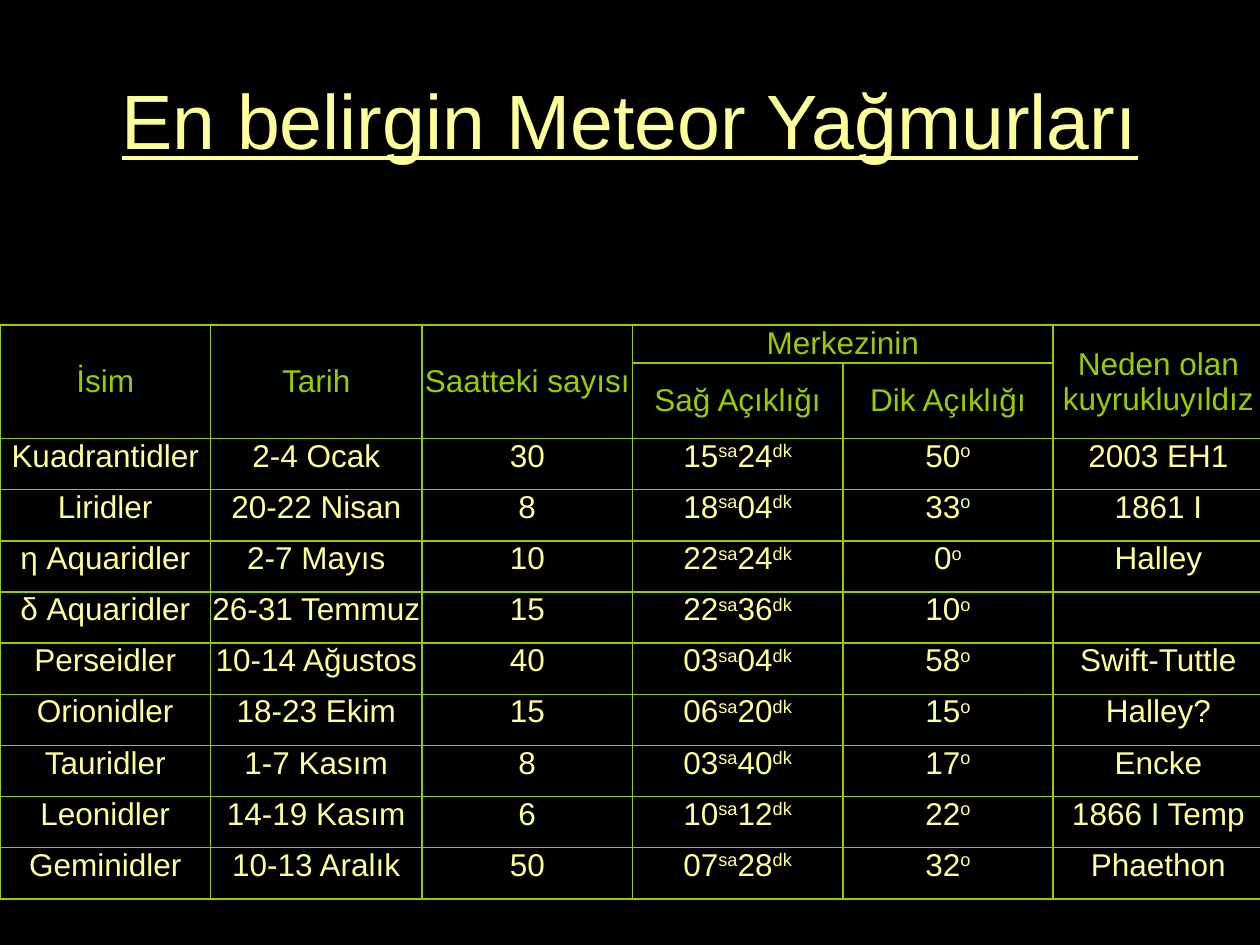
"""Build a slide with a table of the most prominent meteor showers."""

from dataclasses import dataclass
from typing import NamedTuple

from lxml import etree
from pptx import Presentation
from pptx.dml.color import RGBColor
from pptx.enum.text import MSO_ANCHOR, PP_ALIGN
from pptx.oxml.ns import qn
from pptx.util import Inches, Pt

CENTER = PP_ALIGN.CENTER
MIDDLE = MSO_ANCHOR.MIDDLE
TOP = MSO_ANCHOR.TOP


@dataclass(frozen=True)
class Theme:
    font: str = "Arial"
    back: str = "000000"
    text: str = "FFFF99"
    accent: str = "99CC00"
    title: int = 44
    body: int = 18
    line: int = 1


class Part(NamedTuple):
    text: str
    raised: bool = False


class Head(NamedTuple):
    text: str
    row: int
    col: int
    last_row: int
    last_col: int


class Shower(NamedTuple):
    name: str
    date: str
    rate: str
    hour: str
    minute: str
    angle: str
    comet: str

    def cells(self) -> list[list[Part]]:
        ascent = [Part(self.hour), Part("sa", True), Part(self.minute), Part("dk", True)]
        return [
            [Part(self.name)],
            [Part(self.date)],
            [Part(self.rate)],
            ascent,
            [Part(self.angle), Part("o", True)],
            [Part(self.comet)] if self.comet else [],
        ]


THEME = Theme()
WIDTHS = [1.67, 1.68, 1.67, 1.67, 1.67, 1.67]
TOTAL = 4.34
FIRST = 0.28
HEADS = [
    Head("İsim", 0, 0, 1, 0),
    Head("Tarih", 0, 1, 1, 1),
    Head("Saatteki sayısı", 0, 2, 1, 2),
    Head("Merkezinin", 0, 3, 0, 4),
    Head("Neden olan kuyrukluyıldız", 0, 5, 1, 5),
    Head("Sağ Açıklığı", 1, 3, 1, 3),
    Head("Dik Açıklığı", 1, 4, 1, 4),
]
SHOWERS = [
    Shower("Kuadrantidler", "2-4 Ocak", "30", "15", "24", "50", "2003 EH1"),
    Shower("Liridler", "20-22 Nisan", "8", "18", "04", "33", "1861 I"),
    Shower("η Aquaridler", "2-7 Mayıs", "10", "22", "24", "0", "Halley"),
    Shower("δ Aquaridler", "26-31 Temmuz", "15", "22", "36", "10", ""),
    Shower("Perseidler", "10-14 Ağustos", "40", "03", "04", "58", "Swift-Tuttle"),
    Shower("Orionidler", "18-23 Ekim", "15", "06", "20", "15", "Halley?"),
    Shower("Tauridler", "1-7 Kasım", "8", "03", "40", "17", "Encke"),
    Shower("Leonidler", "14-19 Kasım", "6", "10", "12", "22", "1866 I Temp"),
    Shower("Geminidler", "10-13 Aralık", "50", "07", "28", "32", "Phaethon"),
]


def write(frame, parts: list[Part], size: int, color: str, underline: bool = False) -> None:
    para = frame.paragraphs[0]
    para.alignment = CENTER
    for part in parts:
        run = para.add_run()
        run.text = part.text
        font = run.font
        font.name = THEME.font
        font.size = Pt(size)
        font.color.rgb = RGBColor.from_string(color)
        if underline:
            font.underline = True
        if part.raised:
            run.font._element.set("baseline", "30000")


def style(cell) -> None:
    cell.margin_left = cell.margin_right = cell.margin_top = cell.margin_bottom = 0
    props = cell._tc.get_or_add_tcPr()
    for side in ("lnL", "lnR", "lnT", "lnB"):
        line = etree.SubElement(props, qn(f"a:{side}"), w=str(Pt(THEME.line)))
        fill = etree.SubElement(line, qn("a:solidFill"))
        etree.SubElement(fill, qn("a:srgbClr"), val=THEME.accent)
    cell.fill.background()


def add_title(slide, text: str) -> None:
    box = slide.shapes.add_textbox(Inches(0.5), Inches(0.43), Inches(9), Inches(1.03))
    frame = box.text_frame
    frame.word_wrap = True
    frame.vertical_anchor = MIDDLE
    write(frame, [Part(text)], THEME.title, THEME.text, underline=True)


def add_grid(slide) -> None:
    count = len(SHOWERS) + 2
    shape = slide.shapes.add_table(
        count, len(WIDTHS), Inches(0), Inches(2.58), Inches(sum(WIDTHS)), Inches(TOTAL)
    )
    table = shape.table
    table.first_row = table.horz_banding = False
    for col, width in zip(table.columns, WIDTHS):
        col.width = Inches(width)
    for index, row in enumerate(table.rows):
        row.height = Inches((TOTAL - FIRST) / (count - 1) if index else FIRST)
    for cell in table.iter_cells():
        style(cell)
    for head in HEADS:
        cell = table.cell(head.row, head.col)
        if (head.row, head.col) != (head.last_row, head.last_col):
            cell.merge(table.cell(head.last_row, head.last_col))
        cell.vertical_anchor = MIDDLE
        write(cell.text_frame, [Part(head.text)], THEME.body, THEME.accent)
    for row, shower in enumerate(SHOWERS, start=2):
        for col, parts in enumerate(shower.cells()):
            cell = table.cell(row, col)
            cell.vertical_anchor = TOP
            write(cell.text_frame, parts, THEME.body, THEME.text)


def main() -> None:
    deck = Presentation()
    deck.slide_width, deck.slide_height = Inches(10), Inches(7.5)
    slide = deck.slides.add_slide(deck.slide_layouts[6])
    fill = slide.background.fill
    fill.solid()
    fill.fore_color.rgb = RGBColor.from_string(THEME.back)
    add_title(slide, "En belirgin Meteor Yağmurları")
    add_grid(slide)
    deck.save("out.pptx")


if __name__ == "__main__":
    main()
